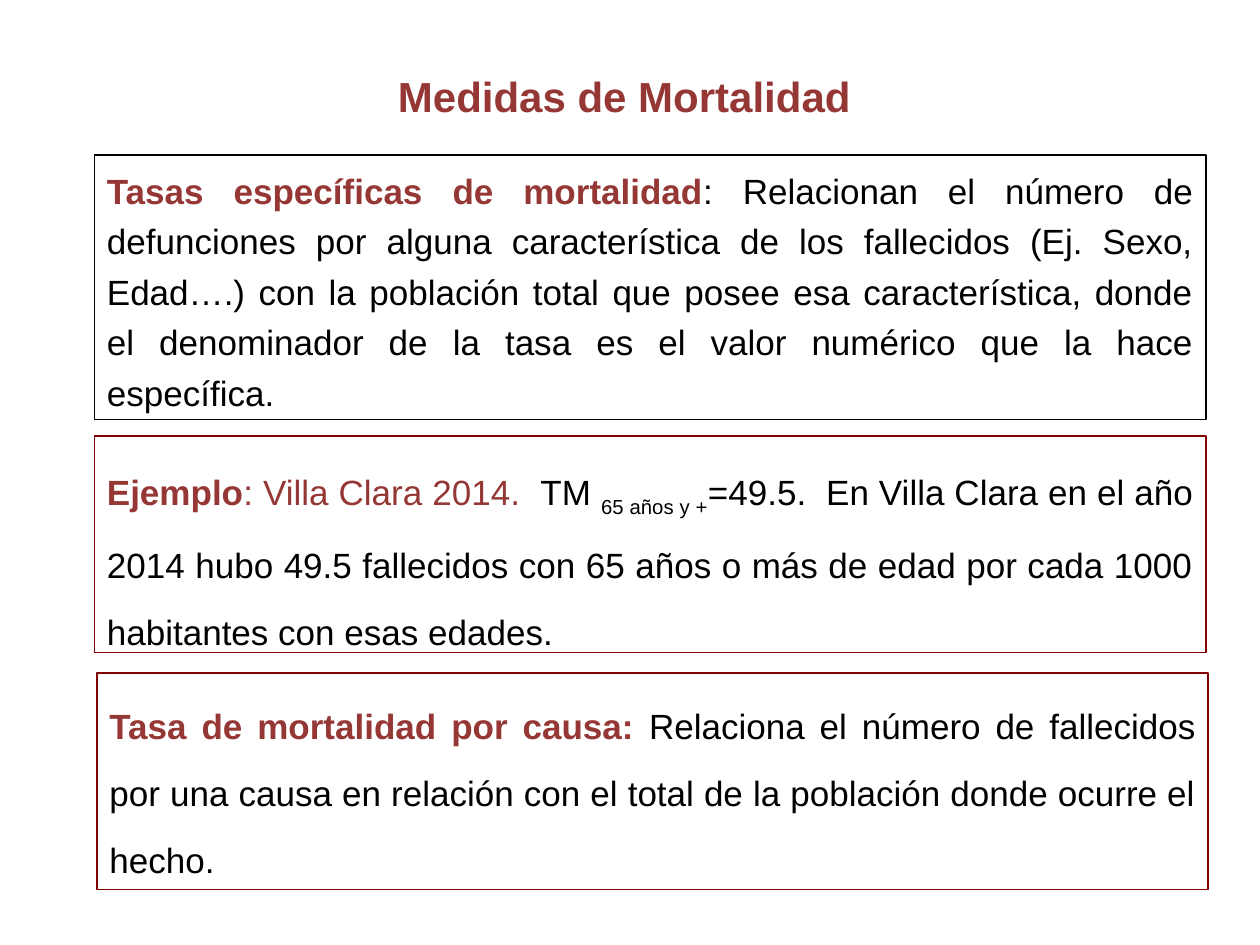
"""Build the slide on mortality measures: a title over three framed definitions."""
from pptx import Presentation
from pptx import util as u
from pptx.dml.color import RGBColor
from pptx.enum import shapes, text

COLORS = {"heading": "953735", "body": "000000", "frame": "800000"}
WIDTH, HEIGHT = u.Inches(10), u.Inches(7.5)
BOX_WIDTH = 8.82


def color(name):
    return RGBColor.from_string(COLORS[name])


def place(sp, left, top, width, height):
    sp.left, sp.top, sp.width, sp.height = map(u.Inches, (left, top, width, height))


def format_text(tf, size, align, spacing):
    tf.word_wrap = True
    tf.auto_size = text.MSO_AUTO_SIZE.SHAPE_TO_FIT_TEXT
    tf.vertical_anchor = text.MSO_ANCHOR.TOP
    p = tf.paragraphs[0]
    p.alignment, p.line_spacing, p.space_before = align, spacing, u.Pt(12.5)
    p.font.name, p.font.size = "Arial", u.Pt(size)
    return p


def add_run(p, words, tint="body", bold=False, subscript=False):
    r = p.add_run()
    r.text = words
    r.font.bold = bold
    r.font.color.rgb = color(tint)
    if subscript:
        r._r.get_or_add_rPr().set("baseline", "-25000")


def add_title(s, words):
    sp = s.shapes.title
    place(sp, 0.98, 0.51, 7.95, 0.51)
    p = format_text(sp.text_frame, 24, text.PP_ALIGN.CENTER, 1.0)
    add_run(p, words, "heading", bold=True)


def add_box(s, left, top, height, frame, spacing, runs):
    sp = s.shapes.add_shape(shapes.MSO_SHAPE.RECTANGLE, 0, 0, 0, 0)
    place(sp, left, top, BOX_WIDTH, height)
    sp.shadow.inherit = False
    sp.fill.background()
    sp.line.color.rgb = color(frame)
    sp.line.width = u.Pt(1)
    p = format_text(sp.text_frame, 20, text.PP_ALIGN.JUSTIFY, spacing)
    for words, style in runs:
        add_run(p, words, **style)


def main():
    prs = Presentation()
    prs.slide_width, prs.slide_height = WIDTH, HEIGHT
    s = prs.slides.add_slide(prs.slide_layouts[5])
    strong = {"tint": "heading", "bold": True}

    add_title(s, "Medidas de Mortalidad")
    add_box(s, 0.75, 3.46, 1.72, "frame", 1.6, [
        ("Ejemplo", strong),
        (": Villa Clara 2014.  ", {"tint": "heading"}),
        ("TM ", {}),
        ("65 años y +", {"subscript": True}),
        ("=49.5.  En Villa Clara en el año 2014 hubo 49.5 fallecidos con 65 años "
         "o más de edad por cada 1000 habitantes con esas edades.", {}),
    ])
    add_box(s, 0.75, 1.23, 2.1, "body", 1.2, [
        ("Tasas específicas de mortalidad", strong),
        (": Relacionan el número de defunciones por alguna característica de los "
         "fallecidos (Ej. Sexo, Edad….) con la población total que posee esa "
         "característica, donde el denominador de la tasa es el valor numérico "
         "que la hace específica.", {}),
    ])
    add_box(s, 0.77, 5.34, 1.72, "frame", 1.6, [
        ("Tasa de mortalidad por causa: ", strong),
        ("Relaciona el número de fallecidos por una causa en relación con el "
         "total de la población donde ocurre el hecho.", {}),
    ])
    prs.save("out.pptx")


if __name__ == "__main__":
    main()
